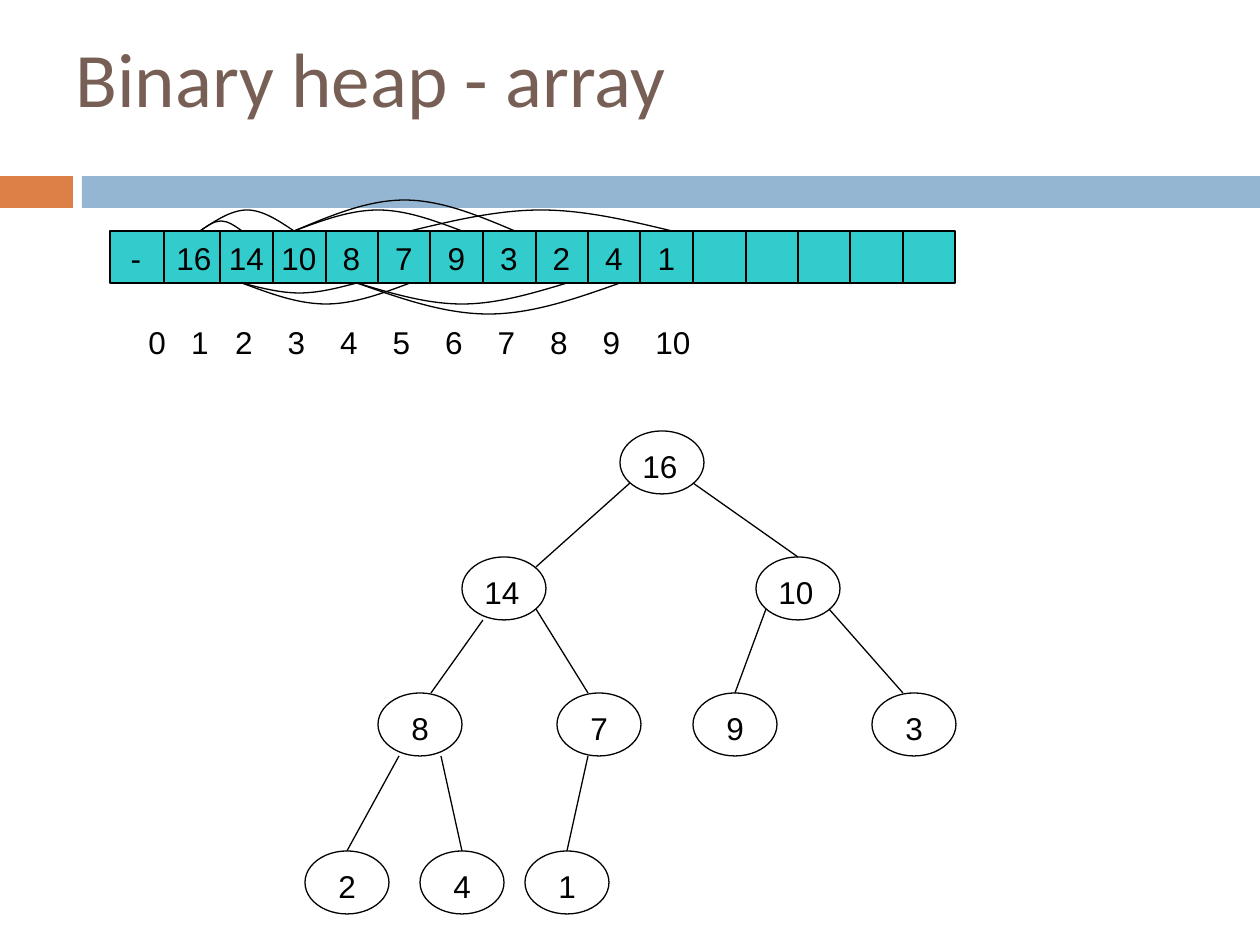
from collections import namedtuple

from lxml.etree import SubElement
from pptx import Presentation
from pptx.dml.color import RGBColor
from pptx.enum.shapes import MSO_CONNECTOR, MSO_SHAPE
from pptx.enum.text import MSO_ANCHOR
from pptx.oxml.ns import qn
from pptx.util import Inches, Pt

Theme = namedtuple("Theme", "orange blue title cell ink heading label outline")
theme = Theme(
    orange=RGBColor(0xDD, 0x80, 0x47),
    blue=RGBColor(0x94, 0xB6, 0xD2),
    title=RGBColor(0x77, 0x5F, 0x55),
    cell=RGBColor(0x33, 0xCC, 0xCC),
    ink=RGBColor(0, 0, 0),
    heading=Pt(44),
    label=Pt(18),
    outline=Pt(0.75),
)
PIXEL = 914400 // 126


def add_text(shapes, text, box, font=("Arial", theme.label, theme.ink), tabs=()):
    text_box = shapes.add_textbox(*(value * PIXEL for value in box))
    frame = text_box.text_frame
    frame.word_wrap = True
    frame.text = text
    paragraph = frame.paragraphs[0]
    run_font = paragraph.runs[0].font
    run_font.name, run_font.size, run_font.color.rgb = font
    if tabs:
        tab_list = SubElement(paragraph._p.get_or_add_pPr(), qn("a:tabLst"))
        for tab in tabs:
            position = (tab - box[0]) * PIXEL - frame.margin_left
            SubElement(tab_list, qn("a:tab"), pos=str(round(position)), algn="ctr")
    return frame


def set_outline(shape, fill=None):
    shape.shadow.inherit = False
    if fill is None:
        shape.fill.background()
    else:
        shape.fill.solid()
        shape.fill.fore_color.rgb = fill
    shape.line.color.rgb = theme.ink
    shape.line.width = theme.outline


presentation = Presentation()
presentation.slide_width = Inches(10)
presentation.slide_height = Inches(7.5)
slide = presentation.slides.add_slide(presentation.slide_layouts[6])
shapes = slide.shapes

for left, width, color in ((0, 73, theme.orange), (82, 1178, theme.blue)):
    band = shapes.add_shape(
        MSO_SHAPE.RECTANGLE, left * PIXEL, 176 * PIXEL, width * PIXEL, 32 * PIXEL
    )
    set_outline(band, color)
    band.line.fill.background()

title = add_text(
    shapes, "Binary heap - array", (63, 17, 1040, 120),
    ("Calibri", theme.heading, theme.title),
)
title.vertical_anchor = MSO_ANCHOR.MIDDLE

heap = [16, 14, 10, 8, 7, 9, 3, 2, 4, 1]
node_corners = [
    (620, 431),
    (462, 557), (756, 557),
    (378, 693), (557, 693), (693, 693), (872, 693),
    (305, 851), (420, 851), (525, 851),
]
for value, (left, top) in zip(heap, node_corners):
    group = shapes.add_group_shape()
    node = group.shapes.add_shape(
        MSO_SHAPE.OVAL, left * PIXEL, top * PIXEL, 84 * PIXEL, 63 * PIXEL
    )
    set_outline(node)
    indent = 10 if value > 9 else 21
    add_text(group.shapes, str(value), (left + indent, top + 10, 73, 50))

bar_top, bar_bottom = 231, 283
bar = shapes.add_shape(
    MSO_SHAPE.RECTANGLE, 110 * PIXEL, bar_top * PIXEL,
    845 * PIXEL, (bar_bottom - bar_top) * PIXEL,
)
set_outline(bar, theme.cell)

tree_edges = [
    (630, 483, 536, 567), (693, 483, 798, 557),
    (483, 620, 431, 693), (536, 609, 588, 693),
    (766, 609, 735, 693), (829, 609, 903, 693),
    (399, 756, 347, 851), (441, 756, 462, 851),
    (588, 756, 567, 851),
]
divider_lefts = [164] + [round(220.5 + 52.5 * index) for index in range(14)]
dividers = [(left, bar_top, left, bar_bottom) for left in divider_lefts]
for ends in tree_edges + dividers:
    line = shapes.add_connector(
        MSO_CONNECTOR.STRAIGHT, *(value * PIXEL for value in ends)
    )
    line.line.color.rgb = theme.ink
    line.line.width = theme.outline
    SubElement(line._element.spPr, qn("a:effectLst"))

value_centers = [136] + [194 + 52.5 * index for index in range(10)]
add_text(
    shapes, "\t" + "\t".join(["-"] + [str(value) for value in heap]),
    (110, 233, 829, 50), tabs=value_centers,
)
index_centers = [200] + [244 + 52.5 * index for index in range(8)] + [673]
add_text(
    shapes, "\t".join(str(index) for index in range(11)),
    (136, 317, 777, 50), tabs=index_centers,
)

arc_anchors = [200, 242, 294, 357, 410, 462, 515, 567, 620, 672]
arc_heights = [10, 21, 10, 21, 21, 31, 21, 31, 21]
for child, height in enumerate(arc_heights, start=2):
    parent = child // 2
    start, end = arc_anchors[parent - 1], arc_anchors[child - 1]
    base, direction = (bar_top, -1) if parent % 2 else (bar_bottom, 1)
    peak = base + direction * height
    builder = shapes.build_freeform(start * PIXEL, base * PIXEL)
    builder.add_line_segments(
        [((start + end) * PIXEL // 2, peak * PIXEL), (end * PIXEL, base * PIXEL)],
        close=False,
    )
    arc = builder.convert_to_shape()
    set_outline(arc)
    sixth = (end - start) * PIXEL / 6
    foot, crest = (height * PIXEL, 0) if direction < 0 else (0, height * PIXEL)
    middle = (foot + crest) / 2
    curves = [
        [(1, middle), (2, crest), (3, crest)],
        [(4, crest), (5, middle), (6, foot)],
    ]
    for segment, controls in zip(list(arc._element.iter(qn("a:lnTo"))), curves):
        curve = SubElement(segment.getparent(), qn("a:cubicBezTo"))
        for step, down in controls:
            SubElement(
                curve, qn("a:pt"), x=str(round(step * sixth)), y=str(round(down))
            )
        segment.getparent().remove(segment)

presentation.save("out.pptx")
